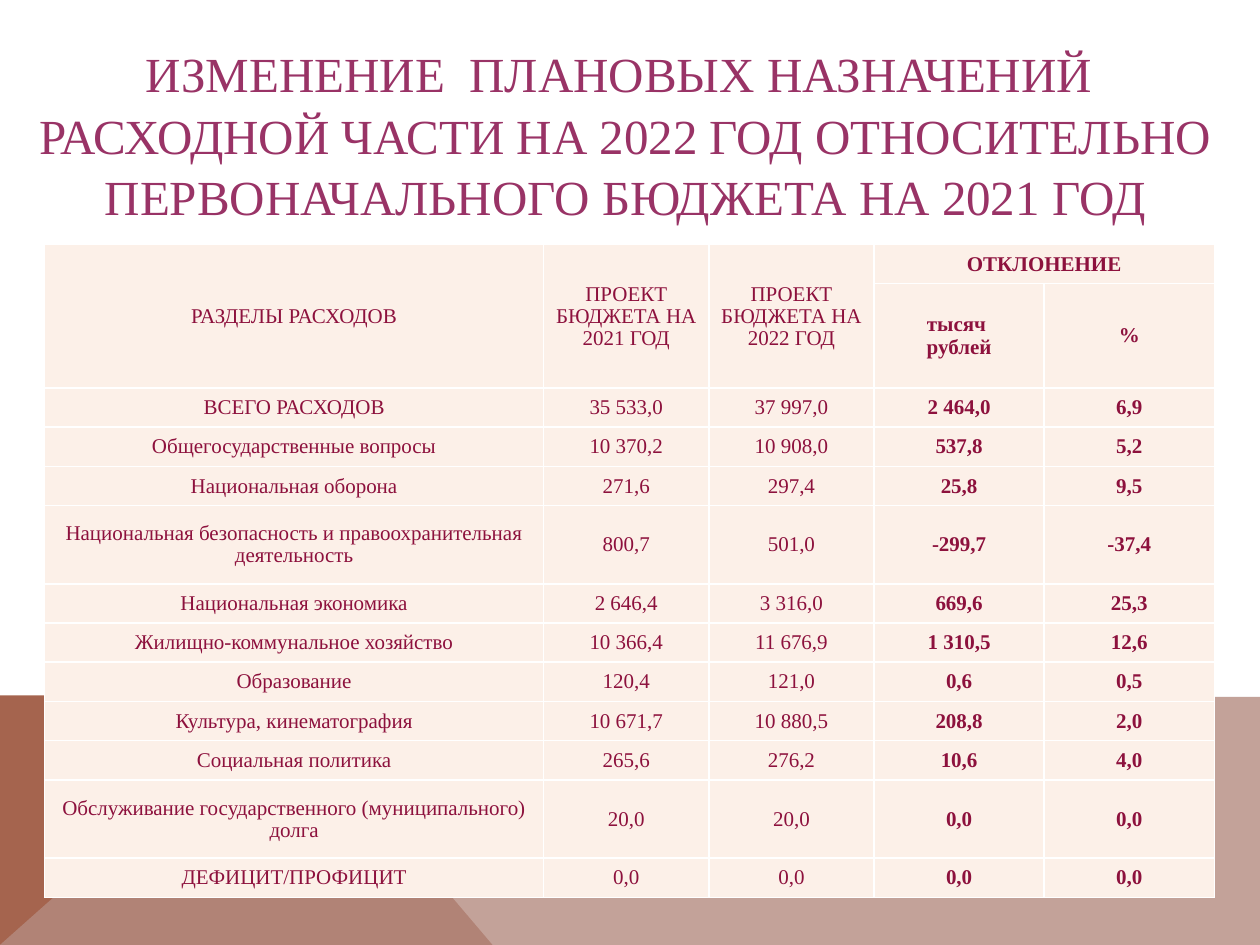
"""Build the slide on changes in planned budget spending."""
import dataclasses
import typing

import lxml.etree
import pptx
import pptx.dml.color
import pptx.enum.text
import pptx.oxml.ns
import pptx.util

Cm = pptx.util.Cm
Pt = pptx.util.Pt
qn = pptx.oxml.ns.qn
FONT = "Times New Roman"
WIDTH, HEIGHT = 25.4, 19.05
COLS = (10.06, 3.33, 3.33, 3.43, 3.43)
ROW, HEAD = 0.79, 2.1
TITLE = (
    "ИЗМЕНЕНИЕ  ПЛАНОВЫХ НАЗНАЧЕНИЙ ",
    "РАСХОДНОЙ ЧАСТИ НА 2022 ГОД ОТНОСИТЕЛЬНО ПЕРВОНАЧАЛЬНОГО БЮДЖЕТА НА 2021 ГОД",
)


@dataclasses.dataclass
class Panel:
    points: tuple[tuple[float, float], ...]
    fill: str
    alpha: int = 100


class Line(typing.NamedTuple):
    name: str
    old: str
    new: str
    diff: str
    rate: str
    span: int = 1


PANELS = (
    Panel(((0, HEIGHT), (0, 14.02), (5.66, 14.02), (9.93, HEIGHT)), "A5644E"),
    Panel(((0, HEIGHT), (5.66, 14.02), (WIDTH, 14.05), (WIDTH, HEIGHT)), "B58B80", 80),
)
HEADS = (
    Line("РАЗДЕЛЫ РАСХОДОВ", "ПРОЕКТ БЮДЖЕТА НА 2021 ГОД",
         "ПРОЕКТ БЮДЖЕТА НА 2022 ГОД", "ОТКЛОНЕНИЕ", ""),
    Line("", "", "", "тысяч \nрублей", "%"),
)
LINES = (
    Line("ВСЕГО РАСХОДОВ", "35 533,0", "37 997,0", "2 464,0", "6,9"),
    Line("Общегосударственные вопросы", "10 370,2", "10 908,0", "537,8", "5,2"),
    Line("Национальная оборона", "271,6", "297,4", "25,8", "9,5"),
    Line("Национальная безопасность и правоохранительная деятельность",
         "800,7", "501,0", "-299,7", "-37,4", 2),
    Line("Национальная экономика", "2 646,4", "3 316,0", "669,6", "25,3"),
    Line("Жилищно-коммунальное хозяйство", "10 366,4", "11 676,9", "1 310,5", "12,6"),
    Line("Образование", "120,4", "121,0", "0,6", "0,5"),
    Line("Культура, кинематография", "10 671,7", "10 880,5", "208,8", "2,0"),
    Line("Социальная политика", "265,6", "276,2", "10,6", "4,0"),
    Line("Обслуживание государственного (муниципального) долга",
         "20,0", "20,0", "0,0", "0,0", 2),
    Line("ДЕФИЦИТ/ПРОФИЦИТ", "0,0", "0,0", "0,0", "0,0"),
)


def paint(target, color: str) -> None:
    if hasattr(target, "solid"):
        target.solid()
        target = target.fore_color
    target.rgb = pptx.dml.color.RGBColor.from_string(color)


def write(para, text: str, size: int, color: str, gap: float, bold: bool = False) -> None:
    para.text = text
    para.alignment = pptx.enum.text.PP_ALIGN.CENTER
    para.line_spacing = gap
    para.font.name = FONT
    para.font.size = Pt(size)
    para.font.bold = bold
    paint(para.font.color, color)


def draw_panel(slide, panel: Panel) -> None:
    first, *rest = [(Cm(x), Cm(y)) for x, y in panel.points]
    pen = slide.shapes.build_freeform(*first)
    pen.add_line_segments(rest, close=True)
    shape = pen.convert_to_shape()
    shape.shadow.inherit = False
    shape.line.fill.background()
    paint(shape.fill, panel.fill)
    if panel.alpha < 100:
        tint = shape.fill._xPr.find(".//" + qn("a:srgbClr"))
        lxml.etree.SubElement(tint, qn("a:alpha"), val=str(panel.alpha * 1000))


def draw_title(slide) -> None:
    box = slide.shapes.add_textbox(Cm(-0.3), Cm(0.69), Cm(25.8), Cm(3.84))
    frame = box.text_frame
    frame.word_wrap = True
    frame.auto_size = pptx.enum.text.MSO_AUTO_SIZE.SHAPE_TO_FIT_TEXT
    for i, text in enumerate(TITLE):
        para = frame.add_paragraph() if i else frame.paragraphs[0]
        write(para, text, 28, "993366", 1.05)


def rule_cell(cell) -> None:
    props = cell._tc.get_or_add_tcPr()
    for i, side in enumerate(("lnL", "lnR", "lnT", "lnB")):
        edge = lxml.etree.Element(qn("a:" + side), w=str(Pt(1)))
        fill = lxml.etree.SubElement(edge, qn("a:solidFill"))
        lxml.etree.SubElement(fill, qn("a:srgbClr"), val="FFFFFF")
        props.insert(i, edge)


def fill_cell(cell, text: str, bold: bool) -> None:
    cell.margin_left = cell.margin_right = cell.margin_top = Cm(0.02)
    cell.margin_bottom = 0
    cell.vertical_anchor = pptx.enum.text.MSO_ANCHOR.MIDDLE
    paint(cell.fill, "FCF0E8")
    rule_cell(cell)
    write(cell.text_frame.paragraphs[0], text, 12, "8D113D", 0.95, bold)


def draw_table(slide) -> None:
    rows = HEADS + LINES
    tall = [ROW, HEAD] + [ROW * line.span for line in LINES]
    table = slide.shapes.add_table(
        len(rows), len(COLS), Cm(0.9), Cm(4.93), Cm(sum(COLS)), Cm(sum(tall))).table
    table.first_row = table.horz_banding = False
    for col, wide in zip(table.columns, COLS):
        col.width = Cm(wide)
    for r, line in enumerate(rows):
        table.rows[r].height = Cm(tall[r])
        for c, text in enumerate(line[:len(COLS)]):
            fill_cell(table.cell(r, c), text, c > 2)
    for c in range(3):
        table.cell(0, c).merge(table.cell(1, c))
    table.cell(0, 3).merge(table.cell(0, 4))


def main() -> None:
    deck = pptx.Presentation()
    deck.slide_width, deck.slide_height = Cm(WIDTH), Cm(HEIGHT)
    slide = deck.slides.add_slide(deck.slide_layouts[6])
    for panel in PANELS:
        draw_panel(slide, panel)
    draw_title(slide)
    draw_table(slide)
    deck.save("out.pptx")


if __name__ == "__main__":
    main()
